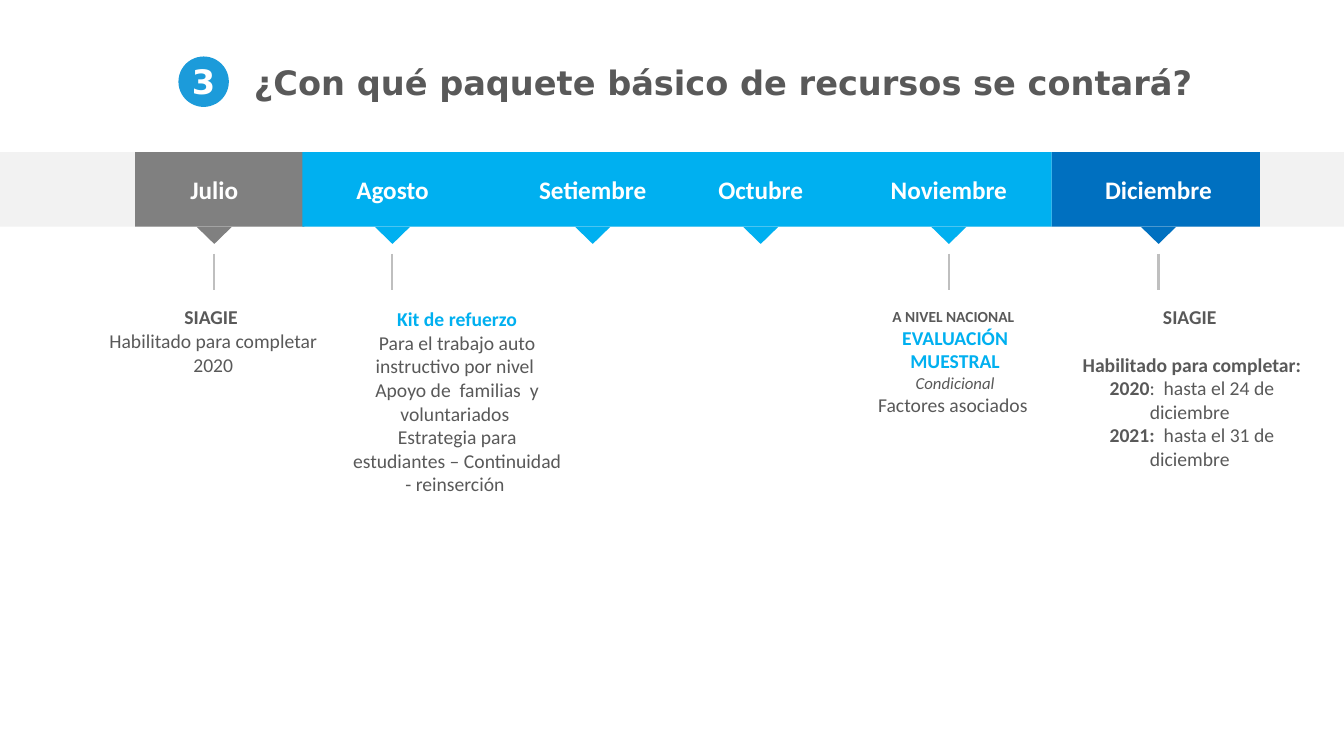
from lxml import etree
from pptx import Presentation
from pptx import util as u
from pptx.dml.color import RGBColor
from pptx.enum import shapes, text
from pptx.oxml.ns import qn

COLORS = {
    "white": "FFFFFF", "band": "F2F2F2", "past": "808080", "current": "00B0F0",
    "final": "0070C0", "badge": "1C9BDA", "body": "595959", "tick": "BFBFBF",
}
WIDTH, HEIGHT = u.Inches(13.33), u.Inches(7.5)
BODY_FONT, TITLE_FONT = "Calibri", "DejaVu Sans"

# All positions are percentages of the slide's width and height
BAND_TOP, BAND_HEIGHT = 20.13, 9.87
POINTER_WIDTH, POINTER_HEIGHT = 2.62, 2.27
TICK_TOP, TICK_BOTTOM = 33.6, 38.4

# Band segments: left, right, colour
SEGMENTS = [(0, 100, "band"), (10.05, 22.65, "past"),
            (78.25, 93.75, "final"), (22.5, 78.25, "current")]

# Months: name, centre, colour, has a tick
MONTHS = [
    ("Julio", 15.94, "past", True),
    ("Agosto", 29.2, "current", True),
    ("Setiembre", 44.1, "current", False),
    ("Octubre", 56.6, "current", False),
    ("Noviembre", 70.6, "current", True),
    ("Diciembre", 86.2, "final", True),
]

# Run styles: size, colour, bold, italic
STYLES = {
    "strong": (14, "body", True, False),
    "plain": (14, "body", False, False),
    "accent": (14, "current", True, False),
    "small": (11, "body", True, False),
    "note": (12, "body", False, True),
}

# Details: left, top, width, height, space after the first paragraph, paragraphs
DETAILS = [
    (6.38, 39.73, 18.98, 17, 0, [
        [("SIAGIE ", "strong")],
        [("Habilitado para completar 2020", "plain")]]),
    (25.28, 40, 17.48, 26.5, 0, [
        [("Kit de refuerzo", "accent")],
        [("Para el trabajo auto instructivo por nivel ", "plain")],
        [("Apoyo de  familias  y voluntariados ", "plain")],
        [("Estrategia para estudiantes – Continuidad - reinserción ", "plain")]]),
    (64.5, 40, 13.13, 16.4, 0, [
        [("A NIVEL NACIONAL ", "small")],
        [("EVALUACIÓN MUESTRAL", "accent")],
        [("Condicional", "note")],
        [("Factores asociados ", "plain")]]),
    (79.8, 39.73, 17.78, 23.3, 17, [
        [("SIAGIE ", "strong")],
        [("Habilitado para completar: ", "strong")],
        [("2020", "strong"), (":  hasta el 24 de diciembre ", "plain")],
        [("2021:  ", "strong"), ("hasta el 31 de diciembre ", "plain")]]),
]


def color(name):
    return RGBColor.from_string(COLORS[name])


def across(share):
    return u.Emu(round(WIDTH * share / 100))


def down(share):
    return u.Emu(round(HEIGHT * share / 100))


def area(left, top, width, height):
    return across(left), down(top), across(width), down(height)


def style_font(font, name, size, color_name, bold, italic=False):
    font.name, font.size = name, u.Pt(size)
    font.bold, font.italic = bold, italic
    font.color.rgb = color(color_name)


def add_block(slide, kind, box, fill):
    shape = slide.shapes.add_shape(kind, *area(*box))
    shape.shadow.inherit = False
    shape.fill.solid()
    shape.fill.fore_color.rgb = color(fill)
    shape.line.fill.background()
    return shape


def write_line(shape, words, font_name, size, color_name, align, spacing=1.0):
    frame = shape.text_frame
    frame.text = words
    frame.vertical_anchor = text.MSO_ANCHOR.MIDDLE
    paragraph = frame.paragraphs[0]
    paragraph.alignment = align
    paragraph.line_spacing = spacing
    style_font(paragraph.runs[0].font, font_name, size, color_name, True)
    return frame


def add_title(slide, number, words):
    title = slide.shapes.add_textbox(*area(15.9, 8.53, 75.75, 5.2))
    frame = write_line(title, words, TITLE_FONT, 24, "body", text.PP_ALIGN.LEFT, 0.9)
    frame.word_wrap = True
    frame.margin_left = u.Inches(0.4)
    badge = add_block(slide, shapes.MSO_SHAPE.OVAL, (13.28, 7.47, 3.75, 6.67), "badge")
    frame = write_line(badge, number, TITLE_FONT, 24, "white", text.PP_ALIGN.CENTER, 0.9)
    frame.word_wrap = False
    frame.margin_left = frame.margin_right = frame.margin_bottom = 0
    frame.margin_top = u.Inches(0.04)


def add_tick(slide, center):
    tick = slide.shapes.add_connector(
        shapes.MSO_CONNECTOR.STRAIGHT, across(center), down(TICK_TOP),
        across(center), down(TICK_BOTTOM))
    tick.line.color.rgb = color("tick")
    tick.line.width = u.Pt(1.5)
    etree.SubElement(tick._element.spPr, qn("a:effectLst"))


def add_month(slide, name, center, fill, has_tick):
    label = slide.shapes.add_textbox(*area(center - 6, 22.4, 12, 5.33))
    write_line(label, name, BODY_FONT, 18, "white", text.PP_ALIGN.CENTER)
    pointer = add_block(
        slide, shapes.MSO_SHAPE.ISOSCELES_TRIANGLE,
        (center - POINTER_WIDTH / 2, BAND_TOP + BAND_HEIGHT, POINTER_WIDTH, POINTER_HEIGHT),
        fill)
    pointer.rotation = 180
    if has_tick:
        add_tick(slide, center)


def add_detail(slide, left, top, width, height, first_gap, paragraphs):
    frame = slide.shapes.add_textbox(*area(left, top, width, height)).text_frame
    frame.word_wrap = True
    for index, runs in enumerate(paragraphs):
        paragraph = frame.add_paragraph() if index else frame.paragraphs[0]
        paragraph.alignment = text.PP_ALIGN.CENTER
        for words, style in runs:
            run = paragraph.add_run()
            run.text = words
            style_font(run.font, BODY_FONT, *STYLES[style])
    frame.paragraphs[0].space_after = u.Pt(first_gap)


def main():
    presentation = Presentation()
    presentation.slide_width, presentation.slide_height = WIDTH, HEIGHT
    slide = presentation.slides.add_slide(presentation.slide_layouts[6])

    # Timeline band
    for left, right, fill in SEGMENTS:
        add_block(slide, shapes.MSO_SHAPE.RECTANGLE,
                  (left, BAND_TOP, right - left, BAND_HEIGHT), fill)

    # Months and what each one brings
    for month in MONTHS:
        add_month(slide, *month)
    for detail in DETAILS:
        add_detail(slide, *detail)

    # Heading
    add_title(slide, "3", "¿Con qué paquete básico de recursos se contará?")
    presentation.save("out.pptx")


if __name__ == "__main__":
    main()
